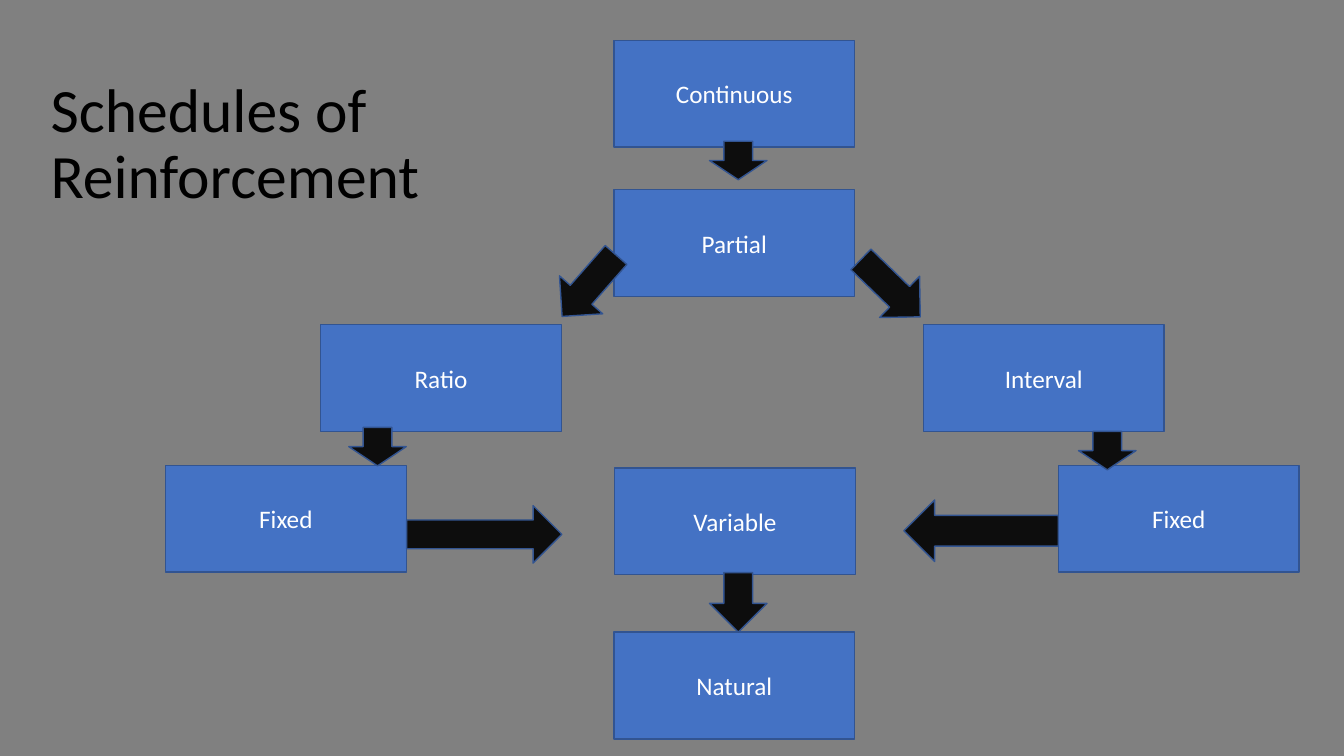
from pptx import Presentation
from pptx.dml.color import RGBColor
from pptx.enum.shapes import MSO_SHAPE
from pptx.enum.text import MSO_ANCHOR, MSO_AUTO_SIZE, PP_ALIGN
from pptx.util import Cm, Pt

TITLE = "Schedules of Reinforcement"
COLORS = {"back": "808080", "box": "4472C4", "line": "325491",
          "arrow": "0D0D0D", "title": "000000", "label": "FFFFFF"}

# Boxes: label, left, top (cm)
BOX_W, BOX_H = 6.07, 2.69
BOXES = [
    ("Continuous", 15.47, 1.02),
    ("Partial", 15.47, 4.78),
    ("Ratio", 8.08, 8.18),
    ("Interval", 23.27, 8.18),
    ("Fixed", 4.17, 11.73),
    ("Variable", 15.49, 11.79),
    ("Fixed", 26.67, 11.73),
    ("Natural", 15.47, 15.93),
]

# Down arrows: left, top, width, length (cm) before turning, rotation
ARROWS = [
    (17.88, 3.56, 1.45, 0.97, 0),      # Continuous to Partial
    (14.12, 6.17, 1.45, 2.06, 41.3),   # Partial to Ratio
    (21.72, 6.22, 1.45, 2.08, 314.1),  # Partial to Interval
    (8.79, 10.77, 1.45, 0.97, 0),      # Ratio to Fixed
    (27.18, 10.87, 1.45, 0.97, 0),     # Interval to Fixed
    (11.48, 11.51, 1.45, 3.91, 270),   # left Fixed to Variable
    (23.95, 11.43, 1.55, 3.89, 90),    # right Fixed to Variable
    (17.88, 14.43, 1.45, 1.5, 0),      # Variable to Natural
]


def rgb(name):
    return RGBColor.from_string(COLORS[name])


def write(shape, text, size, color, align):
    tf = shape.text_frame
    frame = {"word_wrap": True, "auto_size": MSO_AUTO_SIZE.NONE,
             "vertical_anchor": MSO_ANCHOR.MIDDLE}
    for key, value in frame.items():
        setattr(tf, key, value)
    p = tf.paragraphs[0]
    p.alignment = align
    r = p.add_run()
    r.text = text
    for key, value in {"name": "Calibri", "size": Pt(size)}.items():
        setattr(r.font, key, value)
    r.font.color.rgb = rgb(color)
    return p


def add_filled(s, kind, place, fill):
    sp = s.shapes.add_shape(kind, *map(Cm, place))
    sp.shadow.inherit = False
    sp.fill.solid()
    sp.fill.fore_color.rgb = rgb(fill)
    sp.line.color.rgb = rgb("line")
    sp.line.width = Pt(1)
    return sp


def main():
    prs = Presentation()
    prs.slide_width, prs.slide_height = Cm(33.87), Cm(19.05)
    s = prs.slides.add_slide(prs.slide_layouts[5])
    s.background.fill.solid()
    s.background.fill.fore_color.rgb = rgb("back")

    # Title
    title = s.shapes.title
    place = {"left": 1.02, "top": 1.83, "width": 10.67, "height": 3.68}
    for key, value in place.items():
        setattr(title, key, Cm(value))
    write(title, TITLE, 44, "title", PP_ALIGN.LEFT).line_spacing = 0.9

    # Boxes
    for label, left, top in BOXES:
        box = add_filled(s, MSO_SHAPE.RECTANGLE, (left, top, BOX_W, BOX_H), "box")
        write(box, label, 18, "label", PP_ALIGN.CENTER)

    # Arrows
    for *place, turn in ARROWS:
        arrow = add_filled(s, MSO_SHAPE.DOWN_ARROW, place, "arrow")
        arrow.rotation = turn

    prs.save("out.pptx")


if __name__ == "__main__":
    main()
